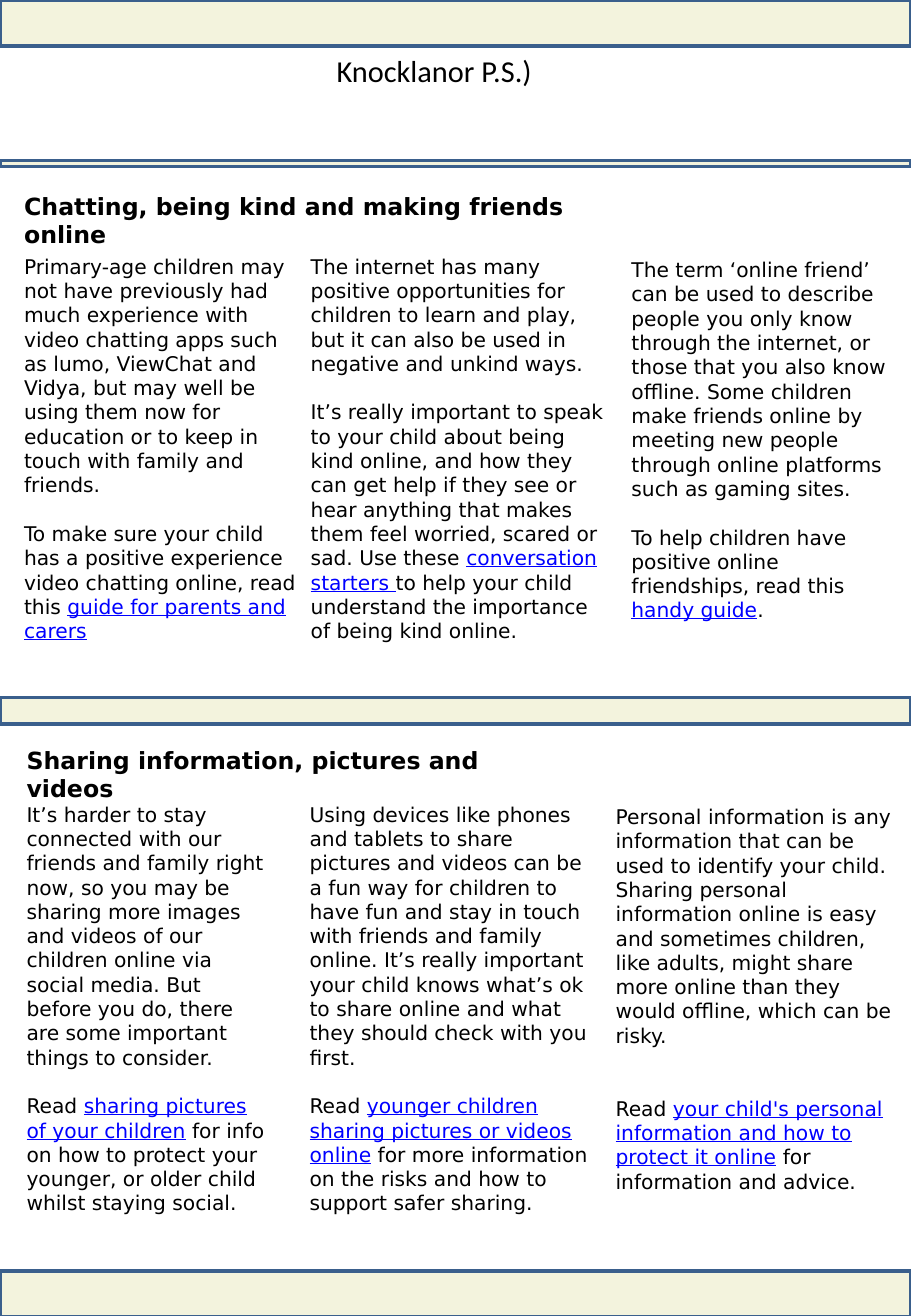
from pptx import Presentation
from pptx import util as u
from pptx.dml.color import RGBColor
from pptx.enum import shapes, text


def rgb(value):
    return RGBColor.from_string(value)


class Newsletter:
    """Style and current slide; lengths are percentages of the slide's size."""
    INK, LINK, BAND, EDGE = "000000", "0000FF", "F3F3DD", "3A5F8C"
    FONT, TITLE_FONT = "DejaVu Sans", "Calibri"
    LINE = 14.4

    def __init__(self, prs):
        self.prs = prs
        self.slide = prs.slides.add_slide(prs.slide_layouts[6])

    def box(self, x, y, w, h):
        width, height = self.prs.slide_width, self.prs.slide_height
        return [round(share * side / 100) for share, side in
                ((x, width), (y, height), (w, width), (h, height))]

    def band(self, y, h):
        sp = self.slide.shapes.add_shape(
            shapes.MSO_SHAPE.RECTANGLE, *self.box(0, y, 100, h))
        sp.shadow.inherit = False
        sp.fill.solid()
        sp.fill.fore_color.rgb = rgb(self.BAND)
        sp.line.color.rgb = rgb(self.EDGE)
        sp.line.width = u.Pt(2)

    def frame(self, x, y, w, h):
        tf = self.slide.shapes.add_textbox(*self.box(x, y, w, h)).text_frame
        tf.word_wrap = True
        tf.auto_size = text.MSO_AUTO_SIZE.SHAPE_TO_FIT_TEXT
        return tf

    def run(self, p, words, size=12, font=FONT, bold=False, link=False):
        r = p.add_run()
        r.text = words
        r.font.size, r.font.name = u.Pt(size), font
        r.font.bold, r.font.underline = bold, link
        r.font.color.rgb = rgb(self.LINK if link else self.INK)

    def title(self, words, *place):
        p = self.frame(*place).paragraphs[0]
        p.alignment = text.PP_ALIGN.CENTER
        self.run(p, words, 18, self.TITLE_FONT)

    def heading(self, words, *place):
        self.run(self.frame(*place).paragraphs[0], words, 14, bold=True)

    def article(self, place, story, lead, link, tail="", gap=1):
        """A story, then gap lines below it a pointer with linked words."""
        tf = self.frame(*place)
        self.run(tf.paragraphs[0], story)
        p = tf.add_paragraph()
        p.space_before = u.Pt(gap * self.LINE)
        self.run(p, lead)
        self.run(p, link, link=True)
        if tail:
            self.run(p, tail)


BANDS = [(0, 3.51), (12.19, 0.46), (53, 2.03), (96.58, 3.51)]

HEADINGS = [
    ("Chatting, being kind and making friends online", 1.33, 14.13, 71.47, 3.14),
    ("Sharing information, pictures and videos", 1.6, 56.23, 62.67, 3.14),
]

ARTICLES = [
    ((1.33, 18.84, 32.93, 30.75),
     "Primary-age children may not have previously had much experience with "
     "video chatting apps such as lumo, ViewChat and Vidya, but may well be "
     "using them now for education or to keep in touch with family and friends.",
     "To make sure your child has a positive experience video chatting online, "
     "read this ", "guide for parents and carers"),
    ((32.8, 18.84, 35.07, 30.75),
     "The internet has many positive opportunities for children to learn and "
     "play, but it can also be used in negative and unkind ways.",
     "It’s really important to speak to your child about being kind online, and "
     "how they can get help if they see or hear anything that makes them feel "
     "worried, scared or sad. Use these ", "conversation starters ",
     "to help your child understand the importance of being kind online."),
    ((68, 19.11, 31.73, 28.9),
     "The term ‘online friend’ can be used to describe people you only know "
     "through the internet, or those that you also know offline. Some children "
     "make friends online by meeting new people through online platforms such "
     "as gaming sites.",
     "To help children have positive online friendships, read this ",
     "handy guide", "."),
    ((1.6, 60.48, 29.2, 32.59),
     "It’s harder to stay connected with our friends and family right now, so "
     "you may be sharing more images and videos of our children online via "
     "social media. But before you do, there are some important things to "
     "consider.",
     "Read ", "sharing pictures of your children",
     " for info on how to protect your younger, or older child whilst staying "
     "social."),
    ((32.67, 60.48, 33.6, 32.59),
     "Using devices like phones and tablets to share pictures and videos can be "
     "a fun way for children to have fun and stay in touch with friends and "
     "family online. It’s really important your child knows what’s ok to share "
     "online and what they should check with you first.",
     "Read ", "younger children sharing pictures or videos online",
     " for more information on the risks and how to support safer sharing."),
    ((66.27, 60.66, 32.93, 30.75),
     "Personal information is any information that can be used to identify your "
     "child. Sharing personal information online is easy and sometimes "
     "children, like adults, might share more online than they would offline, "
     "which can be risky.",
     "Read ", "your child's personal information and how to protect it online",
     " for information and advice.", 2),
]


def main():
    prs = Presentation()
    prs.slide_width, prs.slide_height = u.Inches(7.5), u.Inches(10.83)
    page = Newsletter(prs)
    for band in BANDS:
        page.band(*band)
    page.title("Knocklanor P.S.)", 17.87, 3.51, 59.6, 3.69)
    for heading in HEADINGS:
        page.heading(*heading)
    for article in ARTICLES:
        page.article(*article)
    prs.save("out.pptx")


if __name__ == "__main__":
    main()
